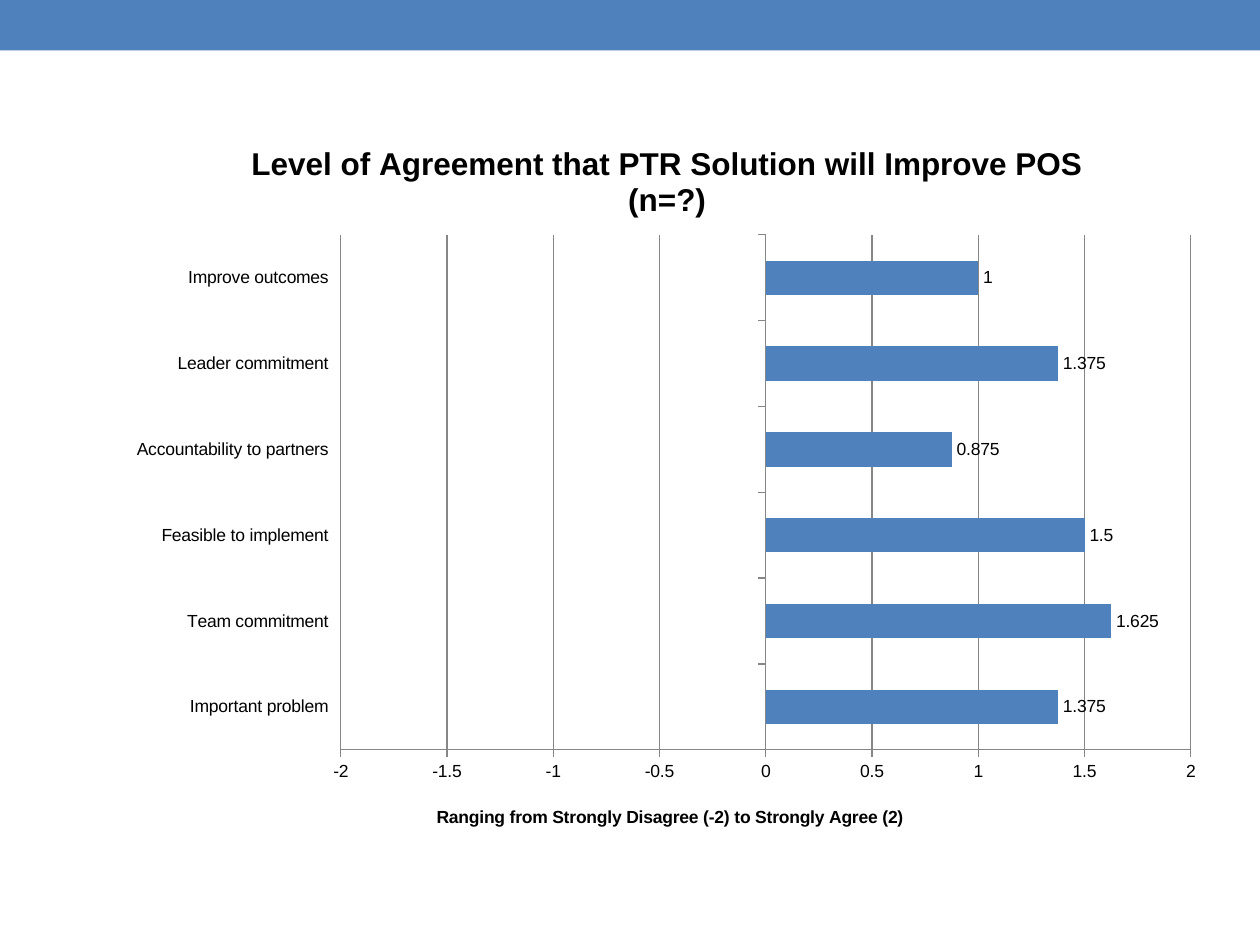
from dataclasses import dataclass

from lxml import etree
from pptx import Presentation
from pptx.chart.data import CategoryChartData
from pptx.dml.color import RGBColor
from pptx.enum.chart import (XL_CHART_TYPE, XL_LABEL_POSITION, XL_TICK_LABEL_POSITION,
                             XL_TICK_MARK)
from pptx.enum.shapes import MSO_SHAPE
from pptx.oxml.ns import qn
from pptx.util import Pt

BARS = XL_CHART_TYPE.BAR_CLUSTERED
OUT_END = XL_LABEL_POSITION.OUTSIDE_END
LOW = XL_TICK_LABEL_POSITION.LOW
OUT, NONE = XL_TICK_MARK.OUTSIDE, XL_TICK_MARK.NONE
RECT = MSO_SHAPE.RECTANGLE


@dataclass(frozen=True)
class Theme:
    blue: RGBColor = RGBColor(0x4F, 0x81, 0xBD)
    black: RGBColor = RGBColor(0, 0, 0)
    gray: RGBColor = RGBColor(0x86, 0x86, 0x86)
    font: str = "Arial"
    head: int = 18
    body: int = 10


@dataclass(frozen=True)
class Score:
    name: str
    mean: float


THEME = Theme()
SCORES = [
    Score("Important problem", 1.375),
    Score("Team commitment", 1.625),
    Score("Feasible to implement", 1.5),
    Score("Accountability to partners", 0.875),
    Score("Leader commitment", 1.375),
    Score("Improve outcomes", 1),
]


def style(font, size: int, bold: bool = False) -> None:
    font.name, font.size, font.bold = THEME.font, Pt(size), bold
    font.color.rgb = THEME.black


def write(frame, text: str, size: int) -> None:
    run = frame.paragraphs[0].add_run()
    run.text = text
    style(run.font, size, True)


def place(node, index: int, **spots: float) -> None:
    """Fix a chart part at fractions of the chart's size."""
    for old in node.findall(qn("c:layout")):
        node.remove(old)
    layout = etree.Element(qn("c:layout"))
    manual = etree.SubElement(layout, qn("c:manualLayout"))
    if "w" in spots:
        etree.SubElement(manual, qn("c:layoutTarget"), val="inner")
    for side in "xy":
        etree.SubElement(manual, qn(f"c:{side}Mode"), val="edge")
    for key, spot in spots.items():
        etree.SubElement(manual, qn(f"c:{key}"), val=str(spot))
    node.insert(index, layout)


def rule(line) -> None:
    line.color.rgb = THEME.gray
    line.width = Pt(0.75)


def draw_band(slide, width: int) -> None:
    band = slide.shapes.add_shape(RECT, 0, 0, width, Pt(28.8))
    band.shadow.inherit = False
    band.fill.solid()
    band.fill.fore_color.rgb = THEME.blue
    band.line.fill.background()


def draw_chart(slide, scores: list[Score]) -> None:
    data = CategoryChartData()
    data.categories = [score.name for score in scores]
    data.add_series("Series 1", [score.mean for score in scores])
    chart = slide.shapes.add_chart(BARS, Pt(66.24), Pt(66.24), Pt(630), Pt(419.76), data).chart
    style(chart.font, THEME.body)
    chart.has_legend = False
    chart.has_title = True
    write(chart.chart_title.text_frame,
          "Level of Agreement that PTR Solution will Improve POS (n=?)", THEME.head)
    chart.chart_title.include_in_layout = False

    # Bars and their values
    plot = chart.plots[0]
    plot.gap_width = 150
    plot.vary_by_categories = False
    fill = plot.series[0].format.fill
    fill.solid()
    fill.fore_color.rgb = THEME.blue
    plot.has_data_labels = True
    labels = plot.data_labels
    labels.show_value = True
    labels.position = OUT_END
    style(labels.font, THEME.body)

    # Axes
    names, scale = chart.category_axis, chart.value_axis
    names.tick_label_position = LOW
    scale.minimum_scale, scale.maximum_scale, scale.major_unit = -2, 2, 0.5
    scale.has_major_gridlines = True
    rule(scale.major_gridlines.format.line)
    for axis in (names, scale):
        axis.major_tick_mark, axis.minor_tick_mark = OUT, NONE
        rule(axis.format.line)
        style(axis.tick_labels.font, THEME.body)
    title = scale.axis_title
    write(title.text_frame, "Ranging from Strongly Disagree (-2) to Strongly Agree (2)", THEME.body)

    # Fixed places inside the chart
    area = plot._element.getparent()
    place(area, 0, x=0.204, y=0.162, w=0.771, h=0.701)
    place(title._element, 1, x=0.288, y=0.934)


def main() -> None:
    deck = Presentation()
    deck.slide_width, deck.slide_height = Pt(720), Pt(540)
    slide = deck.slides.add_slide(deck.slide_layouts[6])
    draw_band(slide, deck.slide_width)
    draw_chart(slide, SCORES)
    deck.save("out.pptx")


if __name__ == "__main__":
    main()
